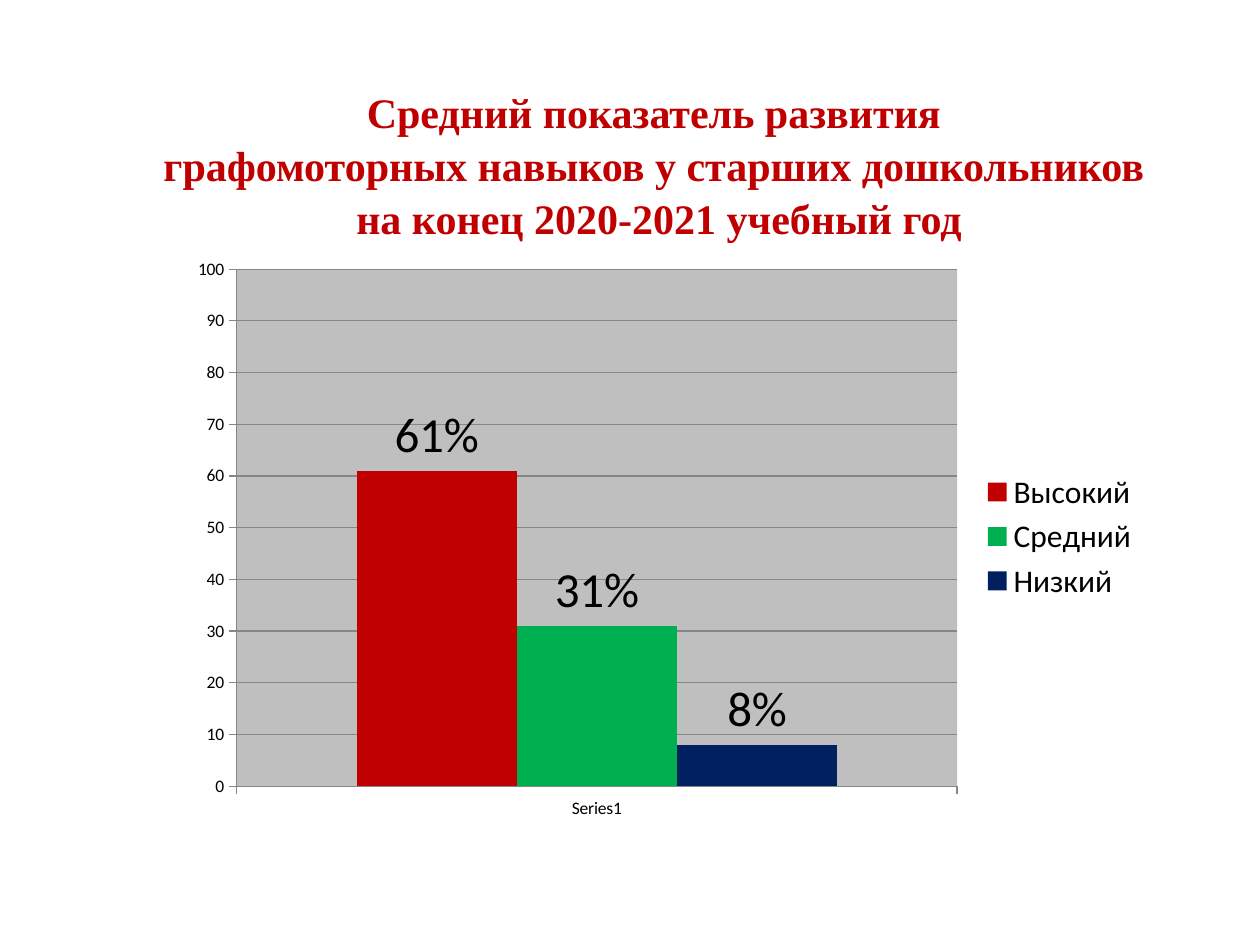
"""Builds a slide with a titled column chart of graphomotor skill levels."""
from lxml.etree import SubElement
from pptx import Presentation
from pptx.chart.data import CategoryChartData
from pptx.dml.color import RGBColor
from pptx.enum.chart import XL_CHART_TYPE, XL_LABEL_POSITION, XL_LEGEND_POSITION, XL_TICK_MARK
from pptx.enum.text import PP_ALIGN
from pptx.oxml import parse_xml
from pptx.oxml.ns import nsdecls, qn
from pptx.util import Pt

PX = 914400 / 126
TITLE_LINES = [
    "Средний показатель развития ",
    "графомоторных навыков у старших дошкольников ",
    "на конец 2020-2021 учебный год",
]
LEVELS = [("Высокий", 61, "C00000"), ("Средний", 31, "00B050"), ("Низкий", 8, "002060")]
PLOT_LAYOUT = {"x": 0.06, "y": 0.04, "w": 0.74, "h": 0.89}


def px(*lengths):
    return [round(length * PX) for length in lengths]


def color(value):
    return RGBColor.from_string(value)


presentation = Presentation()
presentation.slide_width, presentation.slide_height = px(1260, 945)
slide = presentation.slides.add_slide(presentation.slide_layouts[6])

title = slide.shapes.add_textbox(*px(108, 78, 1102, 165))
text_frame = title.text_frame
text_frame.word_wrap = True
text_frame.text = "\n".join(TITLE_LINES)
for paragraph in text_frame.paragraphs:
    paragraph.alignment = PP_ALIGN.CENTER
    paragraph.line_spacing = 1.05
    paragraph.font.name = "Times New Roman"
    paragraph.font.size = Pt(24)
    paragraph.font.bold = True
    paragraph.font.color.rgb = color("C00000")

chart_data = CategoryChartData()
chart_data.categories = ["Series1"]
for name, value, fill in LEVELS:
    chart_data.add_series(name, [value])
chart = slide.shapes.add_chart(
    XL_CHART_TYPE.COLUMN_CLUSTERED, *px(178, 246, 974, 581), chart_data
).chart
chart.has_title = False
chart.font.name = "Calibri"
chart.font.size = Pt(10)
chart.font.color.rgb = color("000000")
chart.has_legend = True
chart.legend.position = XL_LEGEND_POSITION.RIGHT
chart.legend.include_in_layout = False
chart.legend.font.size = Pt(18)

value_axis = chart.value_axis
value_axis.minimum_scale = 0
value_axis.maximum_scale = 100
value_axis.major_unit = 10
value_axis.has_major_gridlines = True
value_axis.major_gridlines.format.line.color.rgb = color("868686")
for axis in (value_axis, chart.category_axis):
    axis.major_tick_mark = XL_TICK_MARK.OUTSIDE
    axis.format.line.color.rgb = color("868686")

plot = chart.plots[0]
plot.gap_width = 150
plot.overlap = 0
plot.vary_by_categories = False
for series, (name, value, fill) in zip(plot.series, LEVELS):
    series.format.fill.solid()
    series.format.fill.fore_color.rgb = color(fill)
    labels = series.data_labels
    labels.show_value = True
    labels.number_format = '0"%"'
    labels.number_format_is_linked = False
    labels.position = XL_LABEL_POSITION.OUTSIDE_END
    labels.font.size = Pt(28)

plot_area = chart.plots[0]._element.getparent()
for layout in plot_area.findall(qn("c:layout")):
    plot_area.remove(layout)
layout = parse_xml(f"<c:layout {nsdecls('c')}><c:manualLayout/></c:layout>")
settings = {"layoutTarget": "inner", "xMode": "edge", "yMode": "edge", **PLOT_LAYOUT}
for tag, setting in settings.items():
    SubElement(layout[0], qn(f"c:{tag}")).set("val", str(setting))
plot_area.insert(0, layout)
plot_area.append(parse_xml(
    f"<c:spPr {nsdecls('c', 'a')}><a:solidFill>"
    '<a:srgbClr val="BFBFBF"/></a:solidFill></c:spPr>'
))

presentation.save("out.pptx")
